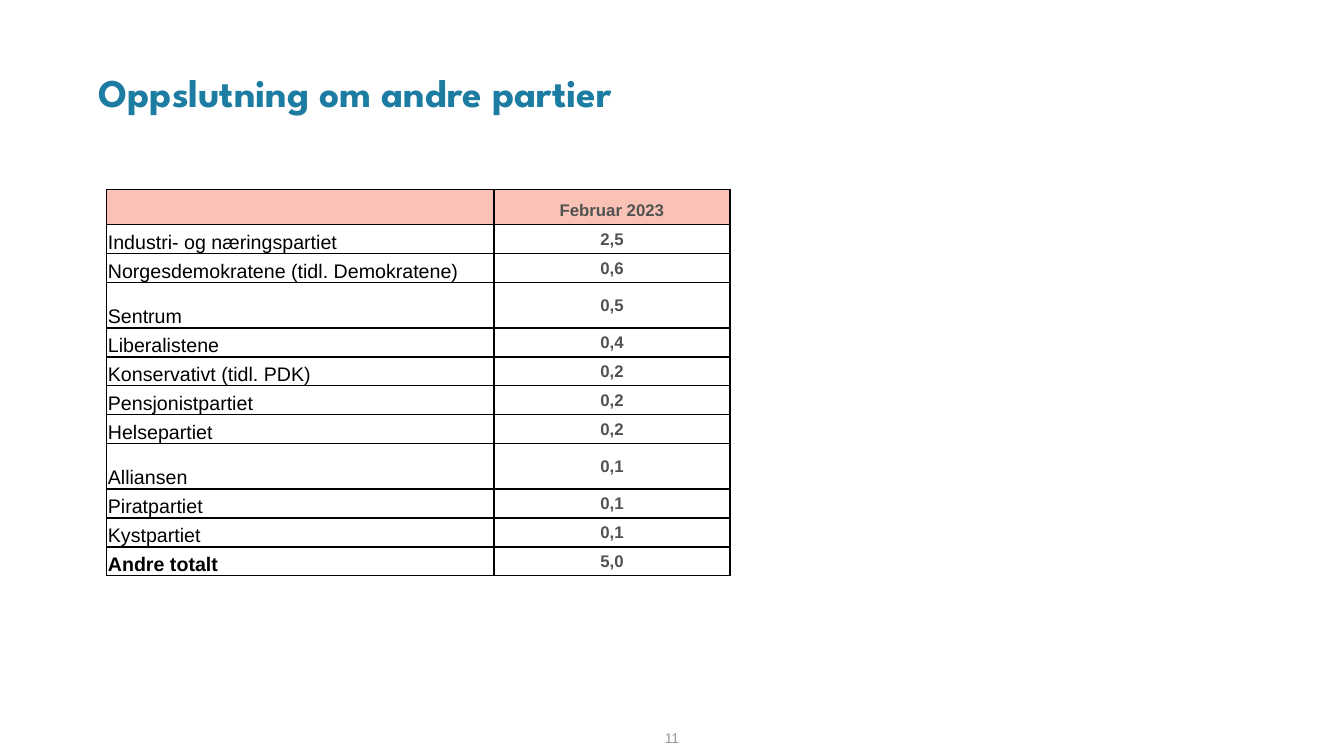
from lxml.etree import SubElement
from pptx import Presentation
from pptx.dml.color import RGBColor
from pptx.enum.text import MSO_ANCHOR as Anchor, PP_ALIGN as Align
from pptx.oxml.ns import qn
from pptx.util import Inches, Pt


def paint(item, tone):
    item.solid()
    item.fore_color.rgb = RGBColor.from_string(tone)


def write(frame, text, tone, align, **form):
    para = frame.paragraphs[0]
    para.alignment = align
    run = para.add_run()
    run.text = text
    paint(run.font.fill, tone)
    for key, value in form.items():
        setattr(run.font, key, value)


deck = Presentation()
deck.slide_width = Inches(13.33)
deck.slide_height = Inches(7.5)
slide = deck.slides.add_slide(deck.slide_layouts[5])

title = slide.shapes.title
place = {"left": 0.88, "top": 0.28, "width": 11.52, "height": 0.92}
for key, value in place.items():
    setattr(title, key, Inches(value))
head = title.text_frame
head.vertical_anchor = Anchor.BOTTOM
head.paragraphs[0].line_spacing = 0.9
write(head, "Oppslutning om andre partier", "1C7CA1", Align.LEFT,
      size=Pt(28), name="League Spartan", bold=True)

rows = [
    ("", "Februar 2023", 0.35),
    ("Industri- og næringspartiet", "2,5", 0.28),
    ("Norgesdemokratene (tidl. Demokratene)", "0,6", 0.28),
    ("Sentrum", "0,5", 0.45),
    ("Liberalistene", "0,4", 0.28),
    ("Konservativt (tidl. PDK)", "0,2", 0.28),
    ("Pensjonistpartiet", "0,2", 0.28),
    ("Helsepartiet", "0,2", 0.28),
    ("Alliansen", "0,1", 0.45),
    ("Piratpartiet", "0,1", 0.28),
    ("Kystpartiet", "0,1", 0.28),
    ("Andre totalt", "5,0", 0.28),
]
tall = sum(row[2] for row in rows)
table = slide.shapes.add_table(len(rows), 2, Inches(1.06), Inches(1.88),
                               Inches(6.18), Inches(tall)).table
table.first_row = table.horz_banding = False
for col, wide in zip(table.columns, (3.84, 2.34)):
    col.width = Inches(wide)

inset = {"margin_left": 0.01, "margin_right": 0.01,
         "margin_top": 0.01, "margin_bottom": 0}
for i, (party, share, high) in enumerate(rows):
    table.rows[i].height = Inches(high)
    name, value = table.cell(i, 0), table.cell(i, 1)
    for key, gap in inset.items():
        setattr(name, key, Inches(gap))
    name.vertical_anchor = Anchor.BOTTOM
    value.vertical_anchor = Anchor.MIDDLE if i else Anchor.BOTTOM
    if party:
        write(name.text_frame, party, "000000", Align.LEFT,
              size=Pt(14), name="Arial", bold=party == "Andre totalt")
    write(value.text_frame, share, "515350", Align.CENTER,
          size=Pt(12), name="Arial", bold=True)
    for cell in (name, value):
        props = cell._tc.get_or_add_tcPr()
        for side in ("lnL", "lnR", "lnT", "lnB"):
            line = SubElement(props, qn(f"a:{side}"), w=str(Pt(1)))
            fill = SubElement(line, qn("a:solidFill"))
            SubElement(fill, qn("a:srgbClr"), val="000000")
        if i:
            cell.fill.background()
        else:
            paint(cell.fill, "FAC2B6")

page = slide.shapes.add_textbox(Inches(6.29), Inches(7.15),
                                Inches(0.75), Inches(0.35)).text_frame
page.word_wrap = True
page.vertical_anchor = Anchor.MIDDLE
write(page, "11", "989998", Align.CENTER, size=Pt(10), name="Arial")

deck.save("out.pptx")
